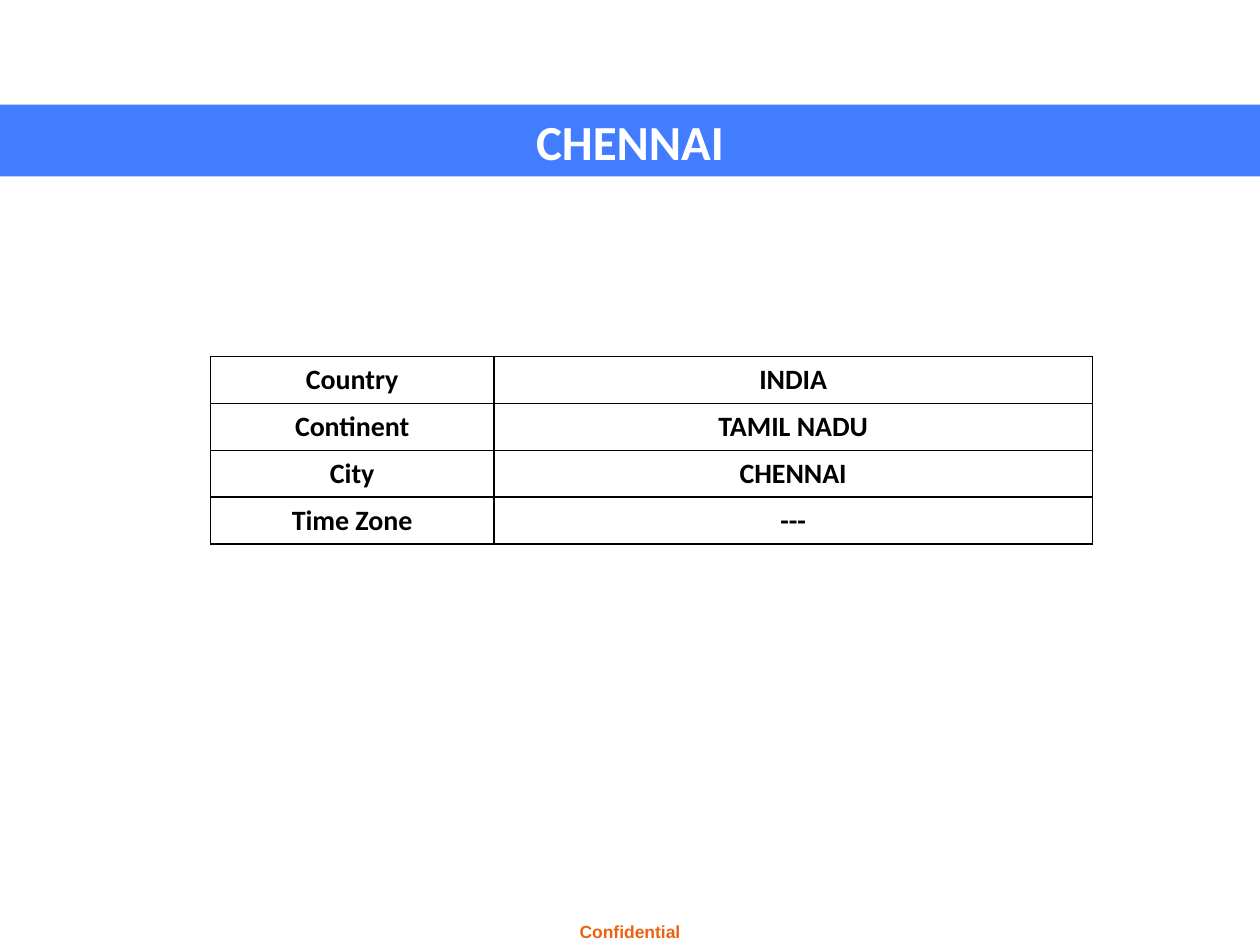
"""Build the Chennai location slide."""
from dataclasses import dataclass

from lxml.etree import SubElement as Sub
from pptx import Presentation
from pptx.dml.color import RGBColor as Rgb
from pptx.enum.text import MSO_ANCHOR as Anchor, MSO_AUTO_SIZE as Fit, PP_ALIGN as Align
from pptx.oxml.ns import qn
from pptx.util import Inches, Pt

HUES = {"band": "437DFF", "white": "FFFFFF", "black": "000000", "note": "EB6312"}
COLS = (2.25, 4.75)
ROW = 0.37


@dataclass
class Style:
    face: str
    size: int
    hue: str


@dataclass
class Fact:
    label: str
    value: str


HEAD = Style("Calibri", 28, "white")
BODY = Style("Calibri", 16, "black")
NOTE = Style("Arial", 10, "note")
FACTS = [
    Fact("Country", "INDIA"),
    Fact("Continent", "TAMIL NADU"),
    Fact("City", "CHENNAI"),
    Fact("Time Zone", "---"),
]


def tint(fill, hue: str) -> None:
    fill.solid()
    fill.fore_color.rgb = Rgb.from_string(HUES[hue])


def write(frame, text: str, style: Style) -> None:
    frame.text = text
    par = frame.paragraphs[0]
    par.alignment = Align.CENTER
    font = par.font
    font.name, font.size, font.bold = style.face, Pt(style.size), True
    font.color.rgb = Rgb.from_string(HUES[style.hue])


def place(shape, left: float, top: float, width: float, height: float) -> None:
    shape.left, shape.top = Inches(left), Inches(top)
    shape.width, shape.height = Inches(width), Inches(height)


def rule(cell) -> None:
    props = cell._tc.get_or_add_tcPr()
    for side in ("lnL", "lnR", "lnT", "lnB"):
        line = Sub(props, qn(f"a:{side}"), w=str(Pt(1)))
        Sub(Sub(line, qn("a:solidFill")), qn("a:srgbClr"), val=HUES["black"])


def fill_cell(cell, text: str) -> None:
    rule(cell)
    tint(cell.fill, "white")
    cell.vertical_anchor = Anchor.MIDDLE
    write(cell.text_frame, text, BODY)


def add_facts(slide, facts: list[Fact]) -> None:
    grid = slide.shapes.add_table(
        len(facts), len(COLS), Inches(1.67), Inches(2.83),
        Inches(sum(COLS)), Inches(ROW * len(facts))).table
    grid.first_row = grid.horz_banding = False
    for col, width in zip(grid.columns, COLS):
        col.width = Inches(width)
    for row, fact in zip(grid.rows, facts):
        row.height = Inches(ROW)
        for cell, text in zip(row.cells, (fact.label, fact.value)):
            fill_cell(cell, text)


def main() -> None:
    deck = Presentation()
    deck.slide_width, deck.slide_height = Inches(10), Inches(7.5)
    slide = deck.slides.add_slide(deck.slide_layouts[5])

    title = slide.shapes.title
    place(title, 0, 0.83, 10, 0.57)
    tint(title.fill, "band")
    title.text_frame.auto_size = Fit.NONE
    title.text_frame.vertical_anchor = Anchor.MIDDLE
    write(title.text_frame, "CHENNAI", HEAD)

    add_facts(slide, FACTS)

    note = slide.shapes.add_textbox(
        Inches(0), Inches(7.26), Inches(10), Inches(0.27))
    note.text_frame.word_wrap = True
    write(note.text_frame, "Confidential", NOTE)

    deck.save("out.pptx")


if __name__ == "__main__":
    main()
